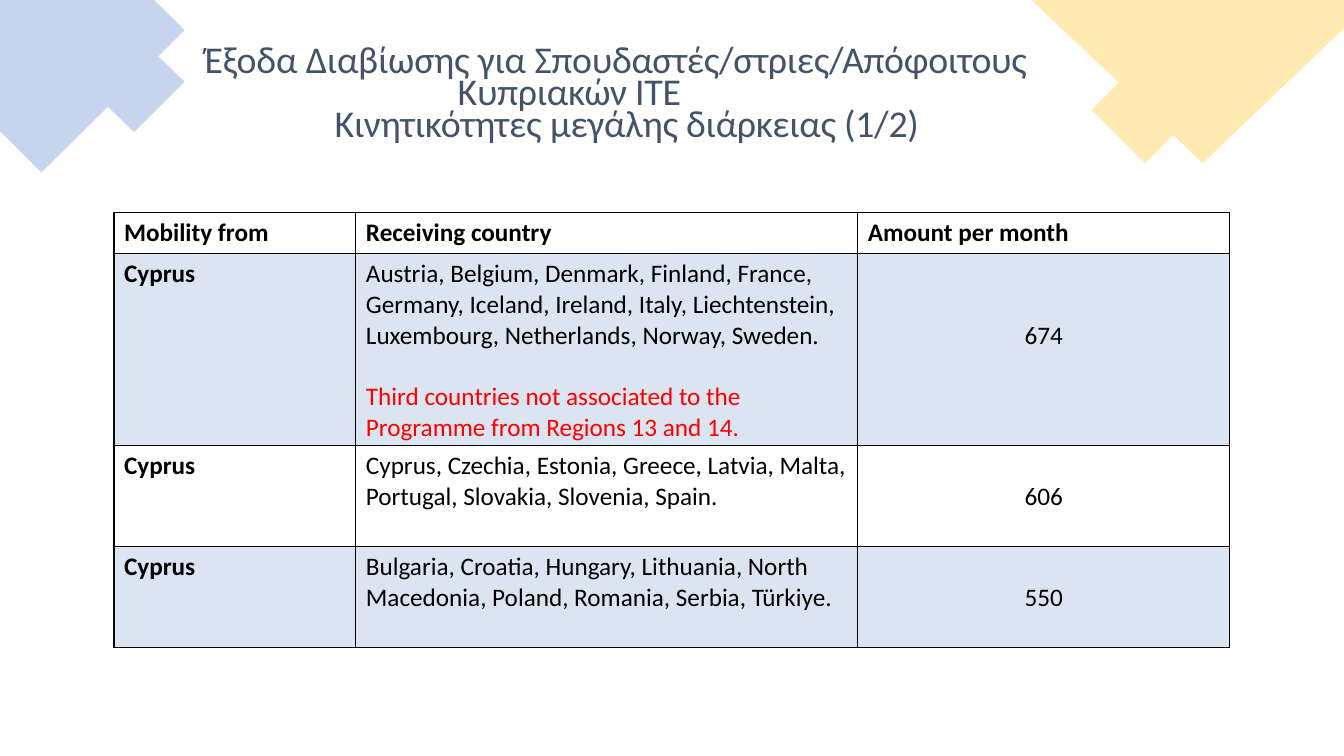
from dataclasses import dataclass

from pptx import Presentation
from pptx.dml.color import RGBColor as Rgb
from pptx.enum.text import MSO_ANCHOR as Anchor, PP_ALIGN as Align
from pptx.oxml.ns import qn
from pptx.util import Inches, Pt
from lxml.etree import SubElement

WIDTH = Inches(13.333)
HEIGHT = Inches(7.5)


@dataclass(frozen=True)
class Theme:
    font: str = "Calibri"
    title_size: float = 27
    body_size: float = 18
    blank_line: float = 22
    title: str = "44536A"
    ink: str = "000000"
    alert: str = "FF0000"
    blue: str = "4471C4"
    gold: str = "FFC000"
    band: str = "4F81BD"
    corner_opacity: int = 30
    band_opacity: int = 20


THEME = Theme()

BLUE_CORNER = [
    (13.73, 4), (11.48, 0), (0, 0), (0, 17.33), (3.08, 22.8),
    (8.03, 14.13), (9.98, 17.47), (13.73, 10.8), (11.78, 7.47),
]
GOLD_CORNER = [
    (100, 0), (76.73, 0), (83.25, 10.93), (81.23, 14.53),
    (85.2, 21.6), (87.3, 17.87), (89.48, 21.6), (100, 3.73),
]
TITLE_LINES = [
    (0, [("Έξοδα ", -10), ("Διαβίωσης ", -20), ("για ", -10),
         ("Σπουδαστές/στριες/Απόφοιτους", -20)]),
    (18.83, [("Κυπριακών ΙΤΕ", -20)]),
    (9.68, [("Κινητικότητες ", -10), ("μεγάλης διάρκειας (1/2)", -20)]),
]
COLUMNS = [18, 37.35, 27.68]
HEADINGS = ["Mobility from", "Receiving country", "Amount per month"]
HEADING_HEIGHT = 5.43
TEXT_LINE = 4.07
CELL_MARGIN = 0.67
RATES = [
    (25.27, "Austria, Belgium, Denmark, Finland, France, Germany, Iceland, "
     "Ireland, Italy, Liechtenstein, Luxembourg, Netherlands, Norway, Sweden.",
     "Third countries not associated to the Programme from Regions 13 and 14.",
     "674", 2),
    (13.36, "Cyprus, Czechia, Estonia, Greece, Latvia, Malta, Portugal, "
     "Slovakia, Slovenia, Spain.", None, "606", 1),
    (13.36, "Bulgaria, Croatia, Hungary, Lithuania, North Macedonia, Poland, "
     "Romania, Serbia, Türkiye.", None, "550", 1),
]


def across(percent):
    return round(WIDTH * percent / 100)


def down(percent):
    return round(HEIGHT * percent / 100)


def paint(fill, parent, color, opacity):
    fill.solid()
    fill.fore_color.rgb = Rgb.from_string(color)
    tone = parent.find(qn("a:solidFill")).find(qn("a:srgbClr"))
    SubElement(tone, qn("a:alpha"), val=str(opacity * 1000))


def add_corner(page, points, color):
    corner = [(across(x), down(y)) for x, y in points]
    builder = page.shapes.build_freeform(*corner[0])
    builder.add_line_segments(corner[1:], close=True)
    shape = builder.convert_to_shape()
    shape.shadow.inherit = False
    shape.line.fill.background()
    paint(shape.fill, shape.element.spPr, color, THEME.corner_opacity)


def add_span(para, text, size, color, bold=False):
    span = para.add_run()
    span.text = text
    span.font.name = THEME.font
    span.font.size = Pt(size)
    span.font.bold = bold
    span.font.color.rgb = Rgb.from_string(color)
    return span


def add_title(page):
    box = page.shapes.add_textbox(across(15.23), down(4.4), across(62.93), down(14.93))
    frame = box.text_frame
    frame.word_wrap = True
    frame.margin_left = frame.margin_right = frame.margin_bottom = 0
    frame.margin_top = down(2)
    for index, (indent, spans) in enumerate(TITLE_LINES):
        para = frame.add_paragraph() if index else frame.paragraphs[0]
        para.line_spacing = 0.7
        para._p.get_or_add_pPr().set("marL", str(across(indent)))
        for text, tracking in spans:
            span = add_span(para, text, THEME.title_size, THEME.title)
            span._r.get_or_add_rPr().set("spc", str(tracking))


def style_cell(cell, banded):
    properties = cell._tc.get_or_add_tcPr()
    for side in ("lnL", "lnR", "lnT", "lnB"):
        line = SubElement(properties, qn(f"a:{side}"), w=str(Pt(1)))
        SubElement(SubElement(line, qn("a:solidFill")), qn("a:srgbClr"), val=THEME.ink)
    if banded:
        paint(cell.fill, properties, THEME.band, THEME.band_opacity)
    else:
        cell.fill.background()
    cell.vertical_anchor = Anchor.TOP


def write_cell(cell, text, bold=False):
    para = cell.text_frame.paragraphs[0]
    add_span(para, text, THEME.body_size, THEME.ink, bold)
    return para


def add_rates_table(page):
    heights = [HEADING_HEIGHT] + [rate[0] for rate in RATES]
    table = page.shapes.add_table(
        len(heights), len(COLUMNS), across(8.48), down(28.13),
        across(sum(COLUMNS)), down(sum(heights)),
    ).table
    table.first_row = table.horz_banding = False
    for column, width in zip(table.columns, COLUMNS):
        column.width = across(width)
    for index, (row, height) in enumerate(zip(table.rows, heights)):
        row.height = down(height)
        for cell in row.cells:
            style_cell(cell, banded=index % 2 == 1)
    for cell, heading in zip(table.rows[0].cells, HEADINGS):
        write_cell(cell, heading, bold=True)
    for index, (_, countries, extra, amount, lines_above) in enumerate(RATES, 1):
        sender, receiver, payment = table.rows[index].cells
        write_cell(sender, "Cyprus", bold=True)
        write_cell(receiver, countries)
        if extra:
            para = receiver.text_frame.add_paragraph()
            para.space_before = Pt(THEME.blank_line)
            add_span(para, extra, THEME.body_size, THEME.alert)
        payment.margin_top = down(CELL_MARGIN + lines_above * TEXT_LINE)
        write_cell(payment, amount).alignment = Align.CENTER


def main():
    deck = Presentation()
    deck.slide_width = WIDTH
    deck.slide_height = HEIGHT
    page = deck.slides.add_slide(deck.slide_layouts[6])
    add_corner(page, BLUE_CORNER, THEME.blue)
    add_corner(page, GOLD_CORNER, THEME.gold)
    add_title(page)
    add_rates_table(page)
    deck.save("out.pptx")


if __name__ == "__main__":
    main()
